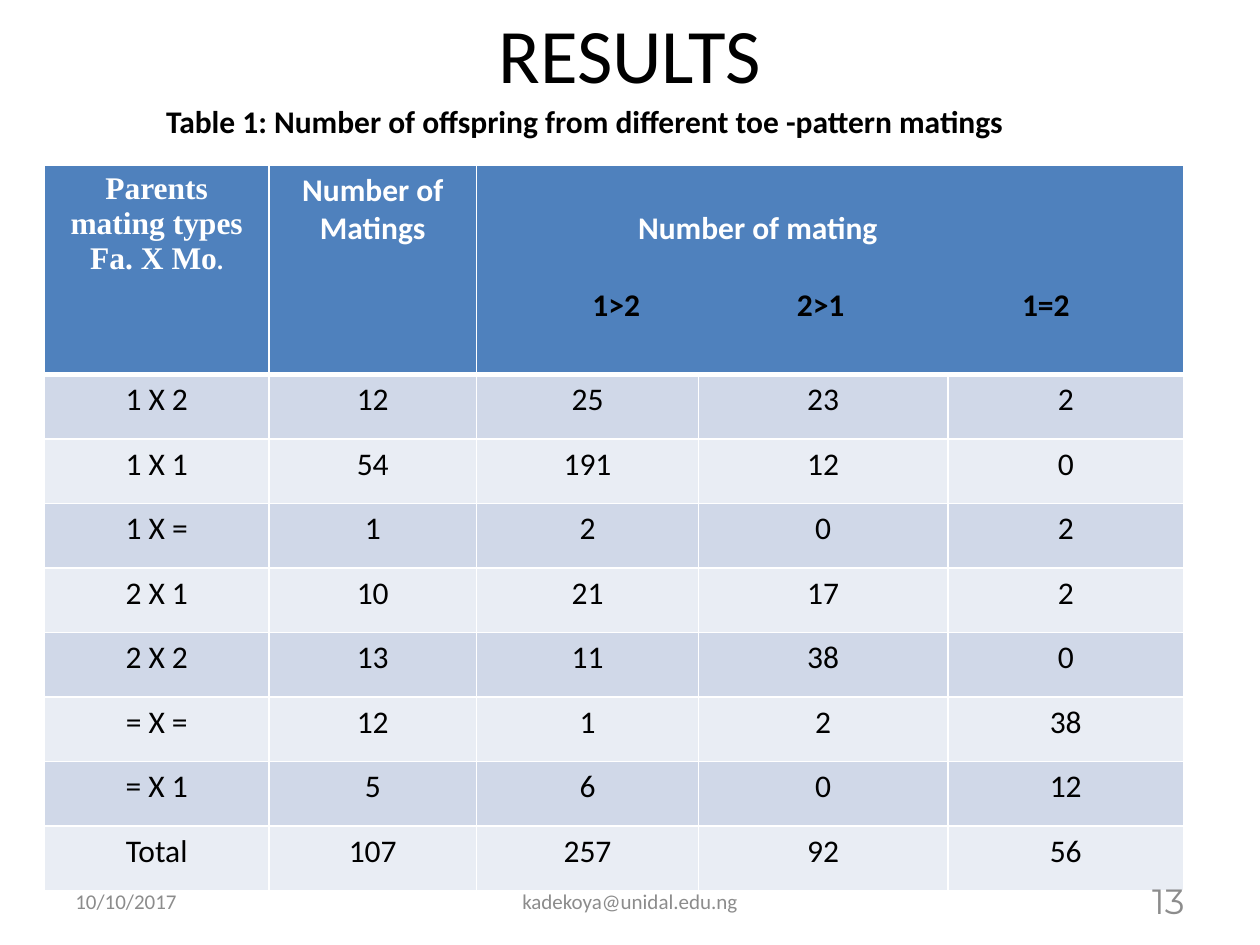
from dataclasses import dataclass

from lxml.etree import SubElement
from pptx import Presentation
from pptx.dml.color import RGBColor
from pptx.enum.text import MSO_ANCHOR, PP_ALIGN
from pptx.oxml import parse_xml
from pptx.oxml.ns import nsdecls, qn
from pptx.util import Cm, Pt


@dataclass(frozen=True)
class Theme:
    black: str = "000000"
    white: str = "FFFFFF"
    grey: str = "8C8C8C"
    header: str = "4F81BD"
    bands: tuple = ("D0D8E8", "E9EDF4")
    body_font: str = "Calibri"
    serif_font: str = "Times New Roman"
    number_font: str = "Montserrat"
    title_size: int = 44
    body_size: int = 18
    period_size: int = 14
    footer_size: int = 12
    number_size: int = 20
    thin: int = 1
    thick: int = 3


THEME = Theme()
COLUMN_WIDTHS = (4.52, 4.19, 4.47, 5.03, 4.75)
HEADER_HEIGHT = 4.22
ROW_HEIGHT = 1.3
PATTERN_TABS = (2.08, 6.2, 10.74)
MATINGS = (
    ("1 X 2", 12, 25, 23, 2),
    ("1 X 1", 54, 191, 12, 0),
    ("1 X =", 1, 2, 0, 2),
    ("2 X 1", 10, 21, 17, 2),
    ("2 X 2", 13, 11, 38, 0),
    ("= X =", 12, 1, 2, 38),
    ("= X 1", 5, 6, 0, 12),
    ("Total", 107, 257, 92, 56),
)


def write(paragraph, text, *, size=THEME.body_size, font=THEME.body_font,
          color=THEME.black, bold=False, align=PP_ALIGN.CENTER):
    paragraph.alignment = align
    run = paragraph.add_run()
    run.text = text
    run.font.size = Pt(size)
    run.font.name = font
    run.font.bold = bold
    run.font.color.rgb = RGBColor.from_string(color)


class ResultsSlide:
    def __init__(self, deck, theme):
        self.theme = theme
        self.slide = deck.slides.add_slide(deck.slide_layouts[5])

    def title(self, text, left, top, width, height):
        heading = self.slide.shapes.title
        heading.left, heading.top = Cm(left), Cm(top)
        heading.width, heading.height = Cm(width), Cm(height)
        heading.text_frame.vertical_anchor = MSO_ANCHOR.MIDDLE
        write(heading.text_frame.paragraphs[0], text, size=self.theme.title_size)

    def label(self, text, left, top, width, height, anchor=MSO_ANCHOR.MIDDLE, **style):
        box = self.slide.shapes.add_textbox(Cm(left), Cm(top), Cm(width), Cm(height))
        frame = box.text_frame
        frame.word_wrap = True
        frame.vertical_anchor = anchor
        write(frame.paragraphs[0], text, **style)

    def paint(self, cell, color, top, bottom):
        cell.fill.solid()
        cell.fill.fore_color.rgb = RGBColor.from_string(color)
        properties = cell._tc.get_or_add_tcPr()
        edges = {"L": self.theme.thin, "R": self.theme.thin, "T": top, "B": bottom}
        for position, (side, points) in enumerate(edges.items()):
            properties.insert(position, parse_xml(
                f'<a:ln{side} {nsdecls("a")} w="{Pt(points)}"><a:solidFill>'
                f'<a:srgbClr val="{self.theme.white}"/></a:solidFill></a:ln{side}>'))

    def table(self, rows, left, top):
        theme = self.theme
        height = HEADER_HEIGHT + ROW_HEIGHT * len(rows)
        grid = self.slide.shapes.add_table(
            len(rows) + 1, len(COLUMN_WIDTHS), Cm(left), Cm(top),
            Cm(sum(COLUMN_WIDTHS)), Cm(height)).table
        for column, width in zip(grid.columns, COLUMN_WIDTHS):
            column.width = Cm(width)
        for row in grid.rows:
            row.height = Cm(ROW_HEIGHT)
        grid.rows[0].height = Cm(HEADER_HEIGHT)
        for column in range(len(COLUMN_WIDTHS)):
            self.paint(grid.cell(0, column), theme.header, theme.thin, theme.thick)
        for index, values in enumerate(rows):
            top_edge = theme.thin if index else theme.thick
            for column, value in enumerate(values):
                cell = grid.cell(index + 1, column)
                self.paint(cell, theme.bands[index % 2], top_edge, theme.thin)
                write(cell.text_frame.paragraphs[0], str(value))
        self.table_header(grid)

    def table_header(self, grid):
        theme = self.theme
        heading = {"color": theme.white, "bold": True}
        serif = {**heading, "font": theme.serif_font}
        parents = grid.cell(0, 0).text_frame
        write(parents.paragraphs[0], "Parents mating types", **serif)
        sexes = parents.add_paragraph()
        write(sexes, "Fa. X Mo", **serif)
        write(sexes, ".", size=theme.period_size, **serif)
        write(grid.cell(0, 1).text_frame.paragraphs[0], "Number of Matings", **heading)

        offspring = grid.cell(0, 2)
        offspring.merge(grid.cell(0, 4))
        offspring.margin_top = Cm(0.9)
        caption = offspring.text_frame.paragraphs[0]
        write(caption, "Number of mating", align=PP_ALIGN.LEFT, **heading)
        caption._p.get_or_add_pPr().set("marL", str(Cm(3)))
        patterns = offspring.text_frame.add_paragraph()
        patterns.space_before = Pt(22)
        write(patterns, "\t1>2\t2>1\t1=2", bold=True, align=PP_ALIGN.LEFT)
        stops = SubElement(patterns._p.get_or_add_pPr(), qn("a:tabLst"))
        for position in PATTERN_TABS:
            SubElement(stops, qn("a:tab"), pos=str(Cm(position)), algn="l")


def main():
    deck = Presentation()
    deck.slide_width, deck.slide_height = Cm(25.4), Cm(19.05)
    results = ResultsSlide(deck, THEME)
    results.title("RESULTS", 1.27, 0, 22.86, 2.13)
    results.label("Table 1: Number of offspring from different toe -pattern matings",
                  3.1, 1.93, 18, 1.02, anchor=MSO_ANCHOR.TOP, bold=True,
                  align=PP_ALIGN.LEFT)
    results.table(MATINGS, 0.9, 3.33)
    footer = {"size": THEME.footer_size, "color": THEME.grey}
    results.label("10/10/2017", 1.27, 17.65, 5.93, 1.02, align=PP_ALIGN.LEFT, **footer)
    results.label("kadekoya@unidal.edu.ng", 8.68, 17.65, 8.04, 1.02, **footer)
    results.label("13", 18.2, 17.65, 5.93, 1.02, size=THEME.number_size,
                  font=THEME.number_font, color=THEME.grey, align=PP_ALIGN.RIGHT)
    deck.save("out.pptx")


if __name__ == "__main__":
    main()
